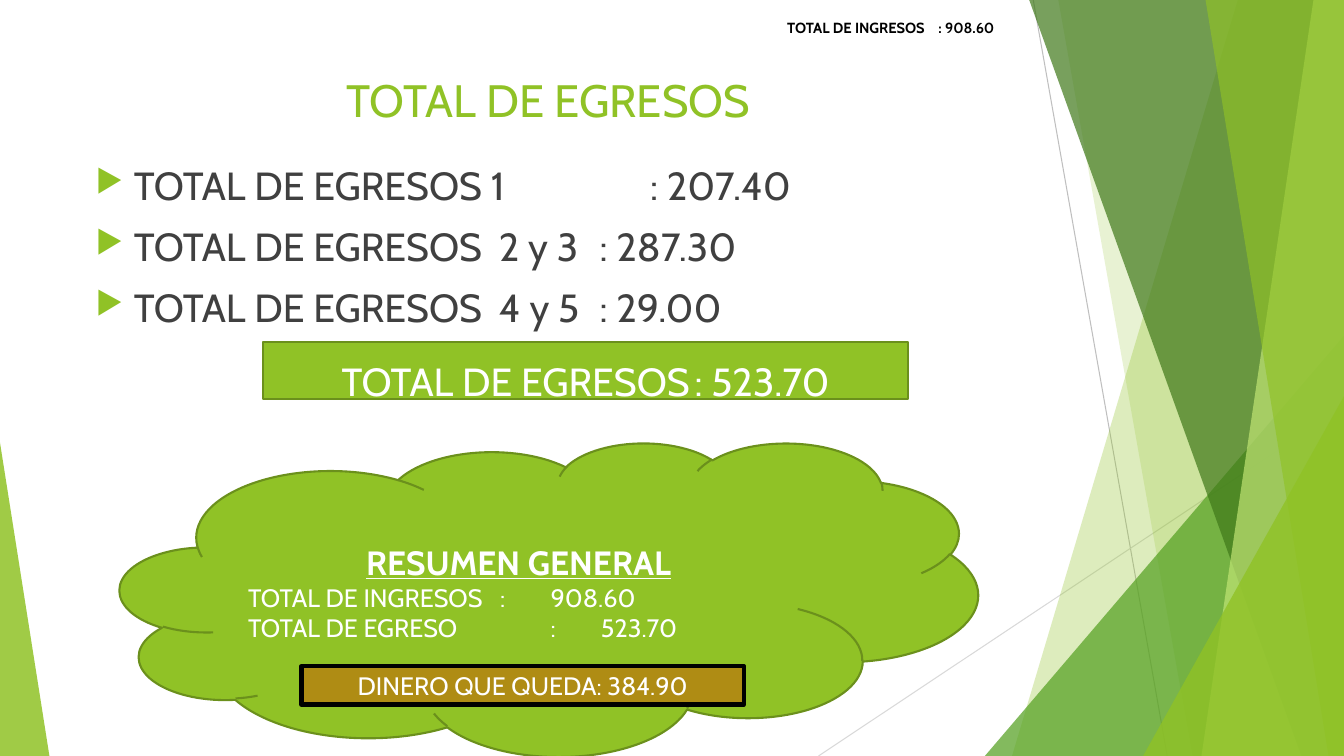
from dataclasses import dataclass

from lxml.etree import SubElement as Sub
from pptx import Presentation as Deck
from pptx.dml.color import RGBColor as Rgb
from pptx.enum.shapes import MSO_CONNECTOR as Link, MSO_SHAPE as Kind
from pptx.enum.text import MSO_ANCHOR as Anchor, PP_ALIGN as Align
from pptx.oxml.ns import qn
from pptx.util import Inches, Pt


@dataclass(frozen=True)
class Theme:
    font: str = "Cabin"
    lime: str = "90C226"
    edge: str = "6B901C"
    leaf: str = "54A021"
    dark: str = "3F7819"
    pale: str = "C0E474"
    gold: str = "AF8C14"
    black: str = "000000"
    white: str = "FFFFFF"
    ink: str = "404040"
    gray: str = "BFBFBF"
    mist: str = "D9D9D9"
    title: float = 32.4
    body: float = 28
    head: float = 24
    text: float = 18
    note: float = 10.5


THEME = Theme()
WIDE, HIGH = Inches(13.333), Inches(7.5)


# Lengths are percent shares of the slide
def across(share):
    return round(WIDE * share / 100)


def down(share):
    return round(HIGH * share / 100)


def place(left, top, width, height):
    return across(left), down(top), across(width), down(height)


# Shapes
def paint(shape, color, edge=None, weight=1.5, alpha=None):
    shape.shadow.inherit = False
    shape.fill.solid()
    shape.fill.fore_color.rgb = Rgb.from_string(color)
    if alpha:
        tint = next(shape._element.spPr.iter(qn("a:srgbClr")))
        Sub(tint, qn("a:alpha")).set("val", str(alpha * 1000))
    if edge:
        shape.line.color.rgb = Rgb.from_string(edge)
        shape.line.width = Pt(weight)
    else:
        shape.line.fill.background()


def add_line(shapes, start, end, color):
    line = shapes.add_connector(
        Link.STRAIGHT, across(start[0]), down(start[1]), across(end[0]), down(end[1]))
    line.line.color.rgb = Rgb.from_string(color)
    line.line.width = Pt(0.75)
    Sub(line._element.spPr, qn("a:effectLst"))


def add_facet(shapes, upper, lower, color, alpha):
    """Slanted band from the top and bottom edges to the right edge."""
    pen = shapes.build_freeform(across(upper), 0)
    pen.add_line_segments([(WIDE, 0), (WIDE, HIGH), (across(lower), HIGH)])
    paint(pen.convert_to_shape(), color, alpha=alpha)


def add_wedge(shapes, left, top, width, peak, color, alpha):
    """Triangle that stands on the bottom edge."""
    wedge = shapes.add_shape(Kind.ISOSCELES_TRIANGLE, *place(left, top, width, 100 - top))
    wedge.adjustments[0] = peak
    paint(wedge, color, alpha=alpha)


# Text
def add_bullet(para):
    props = para._p.get_or_add_pPr()
    props.set("marL", str(Inches(0.38)))
    props.set("indent", str(-Inches(0.38)))
    tint = Sub(Sub(props, qn("a:buClr")), qn("a:srgbClr"))
    tint.set("val", THEME.lime)
    Sub(props, qn("a:buSzPct")).set("val", "80000")
    Sub(props, qn("a:buChar")).set("char", "▶")


def write(shape, rows, size, color, anchor=Anchor.MIDDLE, align=Align.CENTER,
          bullet=False, inset=None):
    """Fill a shape; each row is a text and its own format values."""
    frame = shape.text_frame
    frame.word_wrap = True
    frame.vertical_anchor = anchor
    for name, value in (inset or {}).items():
        setattr(frame, name, value)
    for index, (text, extra) in enumerate(rows):
        para = frame.paragraphs[0] if index == 0 else frame.add_paragraph()
        para.alignment = extra.get("align", align)
        para._p.get_or_add_pPr().set("defTabSz", str(Inches(0.5)))
        if bullet:
            para.space_before = Pt(10)
            add_bullet(para)
        run = para.add_run()
        run.text = text
        style = {"name": THEME.font, "size": Pt(size), **extra.get("font", {})}
        for name, value in style.items():
            setattr(run.font, name, value)
        run.font.color.rgb = Rgb.from_string(color)


def add_text(shapes, box, rows, size, color, **form):
    write(shapes.add_textbox(*place(*box)), rows, size, color, anchor=Anchor.TOP, **form)


def add_label(shapes, kind, box, look, rows, size, inset=None):
    shape = shapes.add_shape(kind, *place(*box))
    paint(shape, **look)
    write(shape, rows, size, THEME.white, inset=inset)


# Slide parts
def draw_decor(shapes):
    add_line(shapes, (76.88, 0), (86.85, 100), THEME.gray)
    add_line(shapes, (100, 53.73), (60.9, 100), THEME.mist)
    add_facet(shapes, 92.1, 75.3, THEME.lime, 30)
    add_facet(shapes, 78.75, 88.73, THEME.lime, 20)
    add_wedge(shapes, 73.28, 44.4, 26.72, 1, THEME.leaf, 72)
    add_facet(shapes, 76.58, 96.83, THEME.dark, 70)
    add_facet(shapes, 97.73, 89.4, THEME.pale, 70)
    add_facet(shapes, 89.7, 98.85, THEME.lime, 65)
    add_wedge(shapes, 85.05, 52.4, 14.95, 1, THEME.lime, 80)
    add_wedge(shapes, 0, 58.53, 3.68, 0, THEME.lime, 85)


def draw_costs(shapes):
    add_text(shapes, (5.55, 8.93, 70.5, 6), [("TOTAL DE EGRESOS", {})],
             THEME.title, THEME.lime)
    costs = ("1\t\t\t: 207.40", "\t2 y 3\t: 287.30", "\t4 y 5\t: 29.00")
    rows = [("TOTAL DE EGRESOS" + ("" if cost[0] == "\t" else " ") + cost, {})
            for cost in costs]
    add_text(shapes, (6.38, 20.67, 70.5, 32.13), rows, THEME.body, THEME.ink,
             align=Align.LEFT, bullet=True)
    add_text(shapes, (57.83, 1.87, 17.1, 3.73),
             [("TOTAL DE INGRESOS\t: 908.60", {"font": {"bold": True}})],
             THEME.note, THEME.black, align=Align.LEFT)


def draw_sums(shapes):
    green = {"color": THEME.lime, "edge": THEME.edge}
    add_label(shapes, Kind.RECTANGLE, (19.58, 45.2, 48, 7.6), green,
              [("TOTAL DE EGRESOS\t: 523.70", {})], THEME.body,
              inset={"margin_top": Inches(0.2), "margin_bottom": 0})
    head = {"size": Pt(THEME.head), "bold": True, "underline": True}
    left = {"align": Align.LEFT}
    add_label(shapes, Kind.CLOUD, (8.93, 58.53, 63.83, 41.47), green,
              [("RESUMEN GENERAL", {"font": head}),
               ("TOTAL DE INGRESOS\t:\t908.60", left),
               ("TOTAL DE EGRESO\t\t:\t523.70", left)], THEME.text)
    add_label(shapes, Kind.RECTANGLE, (22.43, 88.13, 32.93, 5.07),
              {"color": THEME.gold, "edge": THEME.black, "weight": 3},
              [("DINERO QUE QUEDA: 384.90", {})], THEME.text)


def main():
    deck = Deck()
    deck.slide_width, deck.slide_height = WIDE, HIGH
    shapes = deck.slides.add_slide(deck.slide_layouts[6]).shapes
    draw_decor(shapes)
    draw_costs(shapes)
    draw_sums(shapes)
    deck.save("out.pptx")


if __name__ == "__main__":
    main()
